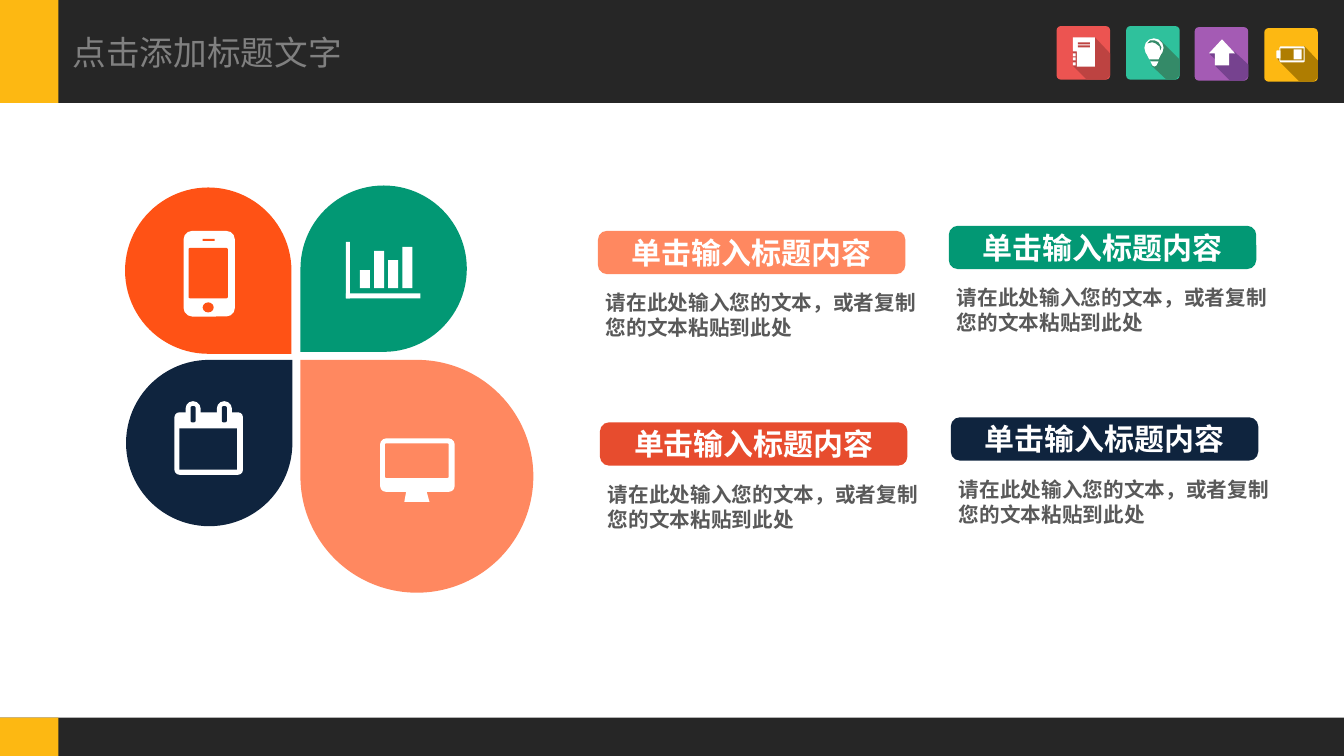
from pptx import Presentation
from pptx.dml.color import RGBColor
from pptx.enum.shapes import MSO_SHAPE
from pptx.enum.text import MSO_ANCHOR, MSO_AUTO_SIZE, PP_ALIGN
from pptx.util import Pt

PX = 9144  # 100 px to the inch
WIDTH, HEIGHT = 1333, 750
COLORS = {
    "dark": "262626", "yellow": "FDB812", "yellow shade": "AF7D01",
    "red": "EC5451", "red shade": "BD4341", "mint": "2FC19C", "mint shade": "348A68",
    "purple": "A45BB4", "purple shade": "76428F", "white": "FFFFFF",
    "orange": "FF5215", "green": "029874", "navy": "0F243E", "salmon": "FF8860",
    "brick": "E74C2E", "body": "595959", "title": "808080",
}
RECT, ROUND, OVAL = MSO_SHAPE.RECTANGLE, MSO_SHAPE.ROUNDED_RECTANGLE, MSO_SHAPE.OVAL
ARROW, TEARDROP = MSO_SHAPE.UP_ARROW, MSO_SHAPE.TEAR

# Icon parts: (kind, colour role, box, adjustments) or ("outline", colour role, points).
# "front" is white, "back" is the colour that shows through the icon.
JOURNAL = [
    ("outline", "front", [(16, 11), (38, 11), (38, 40), (20, 40), (20, 25), (16, 25)]),
    *[(RECT, "back", (21, top, 12, 2)) for top in (16, 19)],
    *[(RECT, "front", (16, top, 3, 3)) for top in (27, 31, 36)],
]
BULB = [
    (OVAL, "front", (18, 12, 19, 19)),
    ("outline", "front", [(19, 25), (36, 25), (32, 33), (23, 33)]),
    ("outline", "front", [(24, 35), (32, 35), (30, 39), (28, 40), (26, 39)]),
    ("outline", "back", [(21, 17), (24, 14), (28, 14), (32, 16), (35, 21), (34, 24),
                         (33, 20), (29, 17), (26, 16)]),
]
UPLOAD = [(ARROW, "front", (14, 12, 26, 26), (0.54, 0.54))]
BATTERY = [
    (ROUND, "front", (15, 18, 25, 16), (0.1,)),
    (RECT, "back", (16, 20, 23, 12)),
    (ROUND, "front", (12, 22, 4, 8), (0.2,)),
    (RECT, "front", (29, 21, 8, 10)),
]
PHONE = [
    (ROUND, "front", (58, 43, 51, 85), (0.17,)),
    (ROUND, "back", (63, 60, 39, 50), (0.04,)),
    (RECT, "back", (77, 51, 12, 2)),
    (OVAL, "back", (77, 114, 11, 10)),
]
BAR_CHART = [
    (RECT, "front", (45, 56, 4, 56)),
    (RECT, "front", (45, 107, 74, 5)),
    *[(RECT, "front", (59 + 14 * index, 102 - height, 10, height))
      for index, height in enumerate((18, 37, 28, 41))],
]
CALENDAR = [
    (ROUND, "front", (48, 52, 68, 62), (0.08,)),
    (RECT, "back", (53, 68, 57, 41)),
    *[(ROUND, "front", (left, 41, 15, 24), (0.5,)) for left in (59, 90)],
    *[(ROUND, "back", (left, 46, 5, 16), (0.3,)) for left in (64, 95)],
]
MONITOR = [
    (ROUND, "front", (79, 78, 74, 53), (0.11,)),
    (ROUND, "back", (84, 83, 63, 34), (0.03,)),
    ("outline", "front", [(105, 130), (125, 130), (128, 141), (103, 141)]),
]

# Header tiles: left, top, colour, shadow outline, icon
TILES = [
    (1048, 26, "red", [(38, 11), (53, 27), (53, 49), (49, 53), (30, 53), (16, 39),
                       (16, 24), (18, 12)], JOURNAL),
    (1117, 26, "mint", [(26, 13), (34, 14), (53, 33), (53, 49), (49, 53), (40, 53),
                        (25, 39), (27, 36), (23, 33), (20, 17)], BULB),
    (1185, 27, "purple", [(39, 24), (53, 37), (53, 49), (49, 53), (35, 53), (20, 38),
                          (26, 37), (14, 26)], UPLOAD),
    (1254, 28, "yellow", [(40, 18), (53, 32), (53, 49), (49, 53), (35, 53), (15, 33),
                          (12, 29), (16, 19)], BATTERY),
]
# Petals: left, top, size, rotation, colour, icon
PETALS = [
    (125, 357, 165, 0, "navy", CALENDAR),
    (298, 357, 231, 270, "salmon", MONITOR),
    (298, 184, 165, 180, "green", BAR_CHART),
    (124, 186, 165, 90, "orange", PHONE),
]


def paint(shape, color):
    shape.shadow.inherit = False
    shape.fill.solid()
    shape.fill.fore_color.rgb = RGBColor.from_string(COLORS[color])
    shape.line.fill.background()
    return shape


def add_block(slide, kind, box, color, adjustments=(), rotation=0):
    shape = slide.shapes.add_shape(kind, *[value * PX for value in box])
    for index, value in enumerate(adjustments):
        shape.adjustments[index] = value
    shape.rotation = rotation
    return paint(shape, color)


def add_outline(slide, left, top, points, color):
    corners = [(left + x, top + y) for x, y in points]
    builder = slide.shapes.build_freeform(*corners[0], scale=PX)
    builder.add_line_segments(corners[1:], close=True)
    return paint(builder.convert_to_shape(), color)


def write(shape, text, size, color, bold=False, align=PP_ALIGN.LEFT, **frame_format):
    frame = shape.text_frame
    for name, value in frame_format.items():
        setattr(frame, name, value)
    paragraph = frame.paragraphs[0]
    paragraph.alignment = align
    run = paragraph.add_run()
    run.text = text
    for name, value in {"name": "Arial", "size": Pt(size), "bold": bold}.items():
        setattr(run.font, name, value)
    run.font.color.rgb = RGBColor.from_string(COLORS[color])


def add_text(slide, box, *args, **formats):
    write(slide.shapes.add_textbox(*[value * PX for value in box]), *args,
          auto_size=MSO_AUTO_SIZE.SHAPE_TO_FIT_TEXT, **formats)


def add_icon(slide, left, top, parts, back):
    roles = {"front": "white", "back": back}
    for kind, role, geometry, *adjustments in parts:
        if kind == "outline":
            add_outline(slide, left, top, geometry, roles[role])
        else:
            x, y, width, height = geometry
            add_block(slide, kind, (left + x, top + y, width, height), roles[role], *adjustments)


def add_band(slide, left, top, width, height):
    add_block(slide, RECT, (left, top, width, height), "dark")
    add_block(slide, RECT, (left, top, 58, height), "yellow")


def add_tile(slide, left, top, color, shadow, icon):
    add_block(slide, ROUND, (left, top, 53, 53), color, (0.075,))
    add_outline(slide, left, top, shadow, f"{color} shade")
    add_icon(slide, left, top, icon, f"{color} shade")


def add_petal(slide, left, top, size, rotation, color, icon):
    add_block(slide, TEARDROP, (left, top, size, size), color, rotation=rotation)
    add_icon(slide, left, top, icon, color)


def add_card(slide, left, top, color):
    bar = add_block(slide, ROUND, (left, top, 305, 43), color, (0.211,))
    write(bar, "单击输入标题内容", 21.4, "white", True, PP_ALIGN.CENTER,
          vertical_anchor=MSO_ANCHOR.MIDDLE, word_wrap=True)
    add_text(slide, (left - 2, top + 54, 328, 59),
             "请在此处输入您的文本，或者复制您的文本粘贴到此处", 14.7, "body", True, word_wrap=True)


def main():
    presentation = Presentation()
    presentation.slide_width, presentation.slide_height = WIDTH * PX, HEIGHT * PX
    slide = presentation.slides.add_slide(presentation.slide_layouts[6])

    # Header and footer
    add_band(slide, 0, 0, WIDTH, 102)
    add_band(slide, 0, 712, WIDTH, 38)
    for tile in TILES:
        add_tile(slide, *tile)
    add_text(slide, (61, 27, 289, 50), "点击添加标题文字", 24, "title",
             align=PP_ALIGN.CENTER, word_wrap=False)

    # Flower of petals
    for petal in PETALS:
        add_petal(slide, *petal)

    # Two by two cards, each row and column slightly staggered
    for index, color in enumerate(("salmon", "green", "brick", "navy")):
        row, column = divmod(index, 2)
        add_card(slide, 593 + 348 * column + 2 * row, 229 - 5 * column + 190 * row, color)

    presentation.save("out.pptx")


if __name__ == "__main__":
    main()
